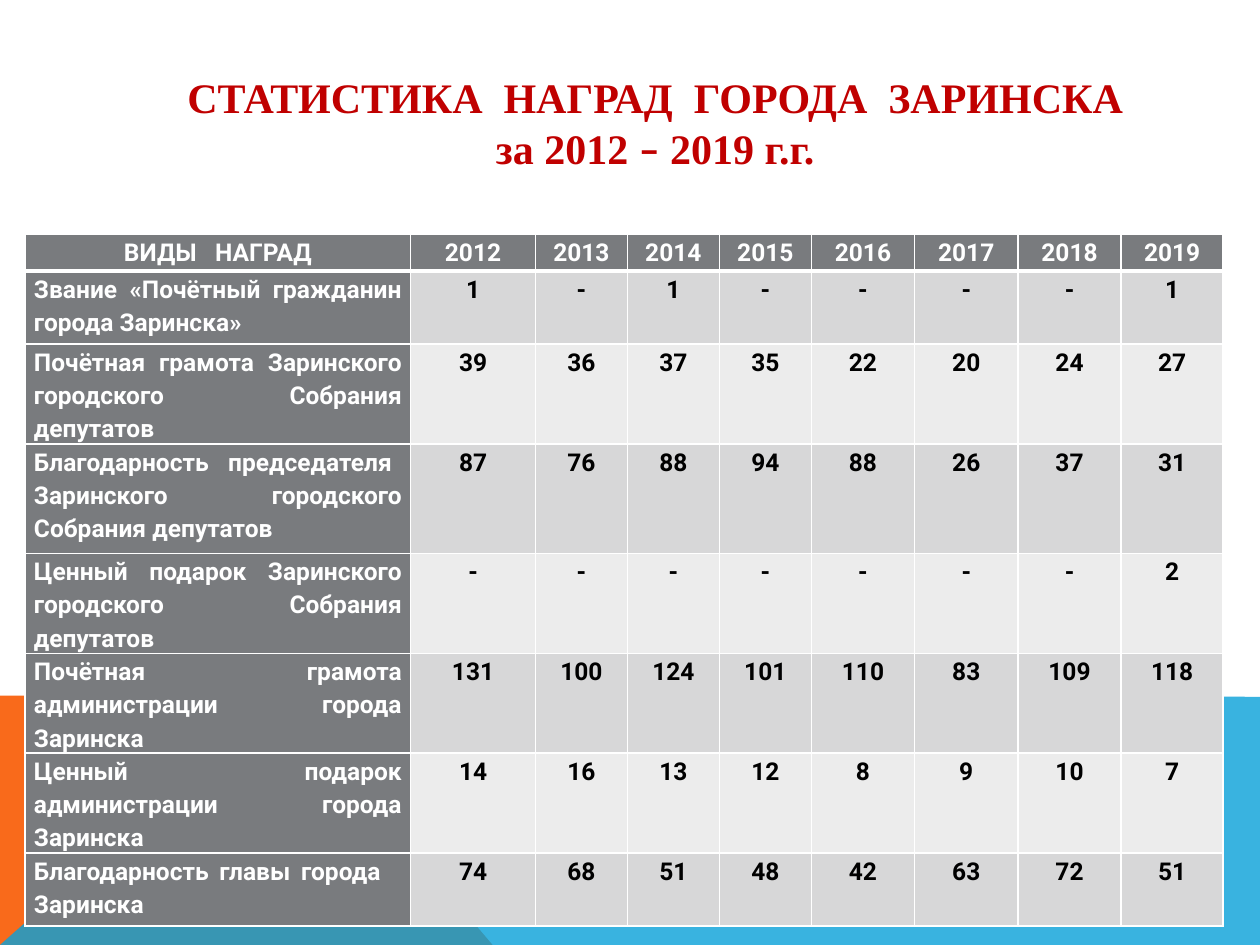
from lxml import etree
from pptx import Presentation
from pptx.dml.color import RGBColor
from pptx.enum.text import MSO_ANCHOR as Anchor, PP_ALIGN as Align
from pptx.oxml.ns import qn
from pptx.util import Inches, Pt

COLORS = {
    "orange": "F96A1B", "blue": "08A1D9", "red": "C00000",
    "header": "797B7E", "odd": "D7D7D8", "even": "ECECEC",
    "white": "FFFFFF", "black": "000000",
}
TITLE = [
    [("СТАТИСТИКА  НАГРАД  ГОРОДА  ЗАРИНСКА", "Times New Roman")],
    [("за 2012 ", "Times New Roman"), ("–", "Calibri"),
     (" 2019 г.г.", "Times New Roman")],
]
AWARDS = [
    ["ВИДЫ   НАГРАД", *range(2012, 2020)],
    ["Звание «Почётный гражданин города Заринска»",
     1, "-", 1, "-", "-", "-", "-", 1],
    ["Почётная грамота Заринского городского Собрания депутатов",
     39, 36, 37, 35, 22, 20, 24, 27],
    ["Благодарность  председателя  Заринского городского Собрания депутатов",
     87, 76, 88, 94, 88, 26, 37, 31],
    ["Ценный подарок Заринского городского Собрания депутатов",
     "-", "-", "-", "-", "-", "-", "-", 2],
    ["Почётная грамота администрации города Заринска",
     131, 100, 124, 101, 110, 83, 109, 118],
    ["Ценный подарок администрации города Заринска",
     14, 16, 13, 12, 8, 9, 10, 7],
    ["Благодарность главы города   Заринска",
     74, 68, 51, 48, 42, 63, 72, 51],
]
COL_WIDTHS = [3.06, 0.99, 0.73, 0.73, 0.73, 0.82, 0.82, 0.82, 0.81]
ROW_HEIGHTS = [0.29, 0.58, 0.58, 0.87, 0.58, 0.58, 0.58, 0.58]


def rgb(name):
    return RGBColor.from_string(COLORS[name])


class AwardsSlide:
    table_font, table_size, title_size = "Roboto", Pt(14), Pt(24)

    def __init__(self, prs):
        self.s = prs.slides.add_slide(prs.slide_layouts[5])

    def polygon(self, points, color, opacity=100):
        pts = [(Inches(x), Inches(y)) for x, y in points]
        builder = self.s.shapes.build_freeform(*pts[0], scale=1.0)
        builder.add_line_segments(pts[1:], close=True)
        sp = builder.convert_to_shape()
        sp.shadow.inherit = False
        sp.line.fill.background()
        sp.fill.solid()
        sp.fill.fore_color.rgb = rgb(color)
        if opacity < 100:
            clr = sp.fill._xPr.find(qn("a:solidFill"))[0]
            etree.SubElement(clr, qn("a:alpha"), val=str(opacity * 1000))

    def title(self, lines, left, top, width, height):
        sp = self.s.shapes.title
        sp.left, sp.top, sp.width, sp.height = map(
            Inches, (left, top, width, height))
        tf = sp.text_frame
        tf.word_wrap = False
        tf.vertical_anchor = Anchor.TOP
        for i, line in enumerate(lines):
            p = tf.add_paragraph() if i else tf.paragraphs[0]
            p.alignment = Align.CENTER
            p.font.size, p.font.bold = self.title_size, True
            p.font.color.rgb = rgb("red")
            for text, font in line:
                r = p.add_run()
                r.text, r.font.name = text, font

    def borders(self, cell, **widths):
        """Draw white cell borders; widths in points by side L, R, T, B."""
        tc_pr = cell._tc.get_or_add_tcPr()
        for side, width in widths.items():
            ln = etree.SubElement(tc_pr, qn(f"a:ln{side}"), w=str(Pt(width)))
            fill = etree.SubElement(ln, qn("a:solidFill"))
            etree.SubElement(fill, qn("a:srgbClr"), val=COLORS["white"])

    def cell(self, cell, value, row, col):
        heading = row == 0 or col == 0
        cell.margin_left = cell.margin_right = Inches(0.07)
        cell.margin_top = cell.margin_bottom = 0
        self.borders(cell, L=1, R=1, T=3 if row == 1 else 1,
                     B=3 if row == 0 else 1)
        cell.fill.solid()
        cell.fill.fore_color.rgb = rgb(
            "header" if heading else "odd" if row % 2 else "even")
        cell.text = str(value)
        p = cell.text_frame.paragraphs[0]
        p.alignment = Align.JUSTIFY if row and col == 0 else Align.CENTER
        p.line_spacing = 1.15
        p.font.name, p.font.size, p.font.bold = (
            self.table_font, self.table_size, True)
        p.font.color.rgb = rgb("white" if heading else "black")

    def table(self, data, left, top, col_widths, row_heights):
        table = self.s.shapes.add_table(
            len(data), len(data[0]), Inches(left), Inches(top),
            Inches(sum(col_widths)), Inches(sum(row_heights))).table
        for column, width in zip(table.columns, col_widths):
            column.width = Inches(width)
        for row, height in zip(table.rows, row_heights):
            row.height = Inches(height)
        for i, values in enumerate(data):
            for j, value in enumerate(values):
                self.cell(table.cell(i, j), value, i, j)


def main():
    prs = Presentation()
    prs.slide_width, prs.slide_height = Inches(10), Inches(7.5)
    slide = AwardsSlide(prs)
    slide.polygon([(0, 7.5), (0, 5.52), (2.23, 5.52), (3.91, 7.5)], "orange")
    slide.polygon([(0, 7.5), (2.23, 5.52), (10, 5.53), (10, 7.5)], "blue", 80)
    slide.table(AWARDS, 0.2, 1.86, COL_WIDTHS, ROW_HEIGHTS)
    slide.title(TITLE, 1.35, 0.52, 7.7, 1.21)
    prs.save("out.pptx")


if __name__ == "__main__":
    main()
